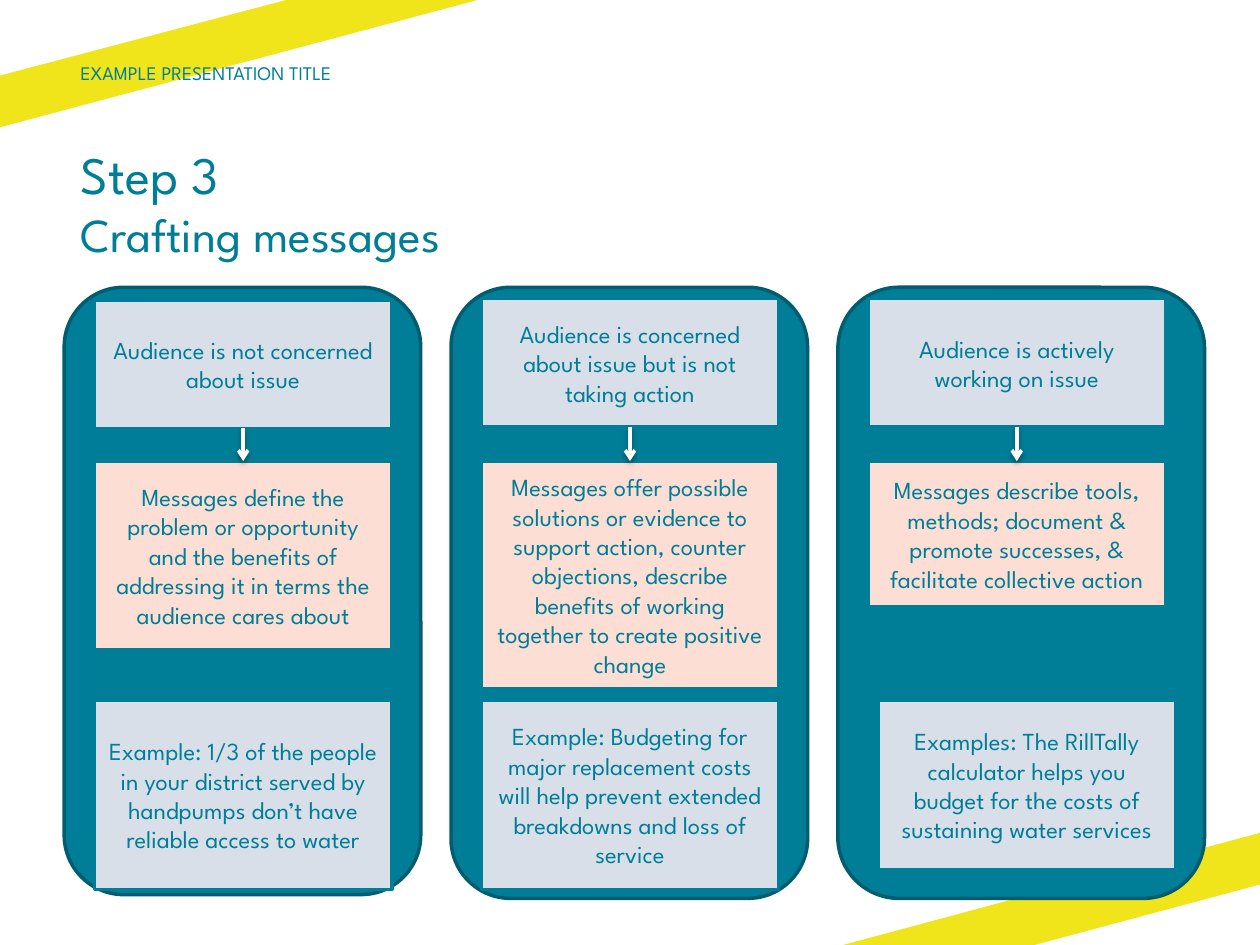
from lxml import etree
from pptx import Presentation
from pptx import util as u
from pptx.dml.color import RGBColor
from pptx.enum import shapes, text
from pptx.oxml import ns

TEAL = RGBColor(0x00, 0x7E, 0x97)
DARK_TEAL = RGBColor(0x00, 0x5D, 0x70)
YELLOW = RGBColor(0xF0, 0xE5, 0x1B)
PEACH = RGBColor(0xFC, 0xDE, 0xD5)
MIST = RGBColor(0xD9, 0xDF, 0xE8)
WHITE = RGBColor(0xFF, 0xFF, 0xFF)

BOX_WIDTH = 2.36
BOX_LEFT = 0.75
PITCH = 3.07
HEAD_HEIGHT = 1.02
MESSAGE_TOP = 3.66
EXAMPLE_TOP = 5.56
PANEL_TOP = 2.28

PANELS = [(0.51, 2.83, 4.82), (3.58, 2.83, 4.85), (6.65, 2.91, 4.85)]

COLUMNS = [
    dict(
        head=("Audience is not concerned about issue", 2.38),
        message=("Messages define the problem or opportunity and the benefits of "
                 "addressing it in terms the audience cares about", 1.5),
        example=("Example: 1/3 of the people in your district served by handpumps "
                 "don’t have reliable access to water", 1.5, 0),
    ),
    dict(
        head=("Audience is concerned about issue but is not taking action", 2.37),
        message=("Messages offer possible solutions or evidence to support action, "
                 "counter objections, describe benefits of working together to "
                 "create positive change", 1.81),
        example=("Example: Budgeting for major replacement costs will help prevent "
                 "extended breakdowns and loss of service", 1.5, 0),
    ),
    dict(
        head=("Audience is actively working on issue", 2.37),
        message=("Messages describe tools, methods; document & promote successes, "
                 "& facilitate collective action", 1.16),
        example=("Examples: The RillTally calculator helps you budget for the costs "
                 "of sustaining water services", 1.34, 0.08),
    ),
]


class Deck:
    """Holds the text style and the current slide, and draws its elements."""

    font_name = "League Spartan"
    ink = TEAL
    line_width = u.Pt(2)

    def __init__(self, slide):
        self.shapes = slide.shapes

    def style_font(self, font, size):
        font.name = self.font_name
        font.size = u.Pt(size)
        font.color.rgb = self.ink

    def band(self, *points):
        corners = [(u.Inches(x), u.Inches(y)) for x, y in points]
        builder = self.shapes.build_freeform(*corners[0], scale=1.0)
        builder.add_line_segments(corners[1:], close=True)
        stripe = builder.convert_to_shape()
        stripe.shadow.inherit = False
        stripe.fill.solid()
        stripe.fill.fore_color.rgb = YELLOW
        stripe.line.fill.background()

    def label(self, left, top, width, height, lines, anchor):
        frame = self.shapes.add_textbox(*map(u.Inches, (left, top, width, height))).text_frame
        frame.word_wrap = True
        frame.vertical_anchor = anchor
        frame.margin_left = frame.margin_top = frame.margin_right = frame.margin_bottom = 0
        paragraph = frame.paragraphs[0]
        for number, (wording, size) in enumerate(lines):
            if number:
                paragraph.add_line_break()
            run = paragraph.add_run()
            run.text = wording
            self.style_font(run.font, size)

    def block(self, kind, left, top, width, height, fill, outline):
        block = self.shapes.add_shape(kind, *map(u.Inches, (left, top, width, height)))
        block.shadow.inherit = False
        block.fill.solid()
        block.fill.fore_color.rgb = fill
        block.line.color.rgb = outline
        block.line.width = self.line_width
        return block

    def panel(self, left, top, width, height):
        self.block(shapes.MSO_SHAPE.ROUNDED_RECTANGLE, left, top, width, height, TEAL, DARK_TEAL)

    def box(self, left, top, height, wording, fill):
        box = self.block(shapes.MSO_SHAPE.RECTANGLE, left, top, BOX_WIDTH, height, fill, TEAL)
        frame = box.text_frame
        frame.word_wrap = True
        frame.vertical_anchor = text.MSO_ANCHOR.MIDDLE
        paragraph = frame.paragraphs[0]
        paragraph.text = wording
        paragraph.alignment = text.PP_ALIGN.CENTER
        self.style_font(paragraph.font, 14)
        return box

    def arrow(self, upper, lower):
        arrow = self.shapes.add_connector(shapes.MSO_CONNECTOR.STRAIGHT, 0, 0, 0, 0)
        arrow.begin_connect(upper, 2)
        arrow.end_connect(lower, 0)
        arrow.line.color.rgb = WHITE
        arrow.line.width = self.line_width
        properties = arrow.line._get_or_add_ln()
        etree.SubElement(properties, ns.qn("a:tailEnd"), type="arrow")
        effects = etree.SubElement(properties.getparent(), ns.qn("a:effectLst"))
        shadow = etree.SubElement(
            effects, ns.qn("a:outerShdw"), blurRad=str(u.Pt(3.1)),
            dist=str(u.Pt(1.6)), dir="5400000", rotWithShape="0")
        black = etree.SubElement(shadow, ns.qn("a:srgbClr"), val="000000")
        etree.SubElement(black, ns.qn("a:alpha"), val="38000")


def main():
    presentation = Presentation()
    presentation.slide_width = u.Inches(10)
    presentation.slide_height = u.Inches(7.5)
    deck = Deck(presentation.slides.add_slide(presentation.slide_layouts[6]))

    deck.band((2.27, 0), (0, 0.6), (0, 1.01), (3.79, 0))
    deck.band((6.69, 7.5), (8.21, 7.5), (10, 7.02), (10, 6.61))
    deck.label(0.64, 1.13, 8.73, 1.02, [("Step 3", 30), ("Crafting messages", 27)],
               text.MSO_ANCHOR.TOP)
    deck.label(0.64, 0.43, 4.57, 0.29, [("EXAMPLE PRESENTATION TITLE", 11)],
               text.MSO_ANCHOR.MIDDLE)

    for number, (panel, column) in enumerate(zip(PANELS, COLUMNS)):
        panel_left, panel_width, panel_height = panel
        deck.panel(panel_left, PANEL_TOP, panel_width, panel_height)
        left = BOX_LEFT + number * PITCH
        audience, head_top = column["head"]
        message, message_height = column["message"]
        example, example_height, shift = column["example"]
        message_box = deck.box(left, MESSAGE_TOP, message_height, message, PEACH)
        deck.box(left + shift, EXAMPLE_TOP, example_height, example, MIST)
        head_box = deck.box(left, head_top, HEAD_HEIGHT, audience, MIST)
        deck.arrow(head_box, message_box)

    presentation.save("out.pptx")


if __name__ == "__main__":
    main()
